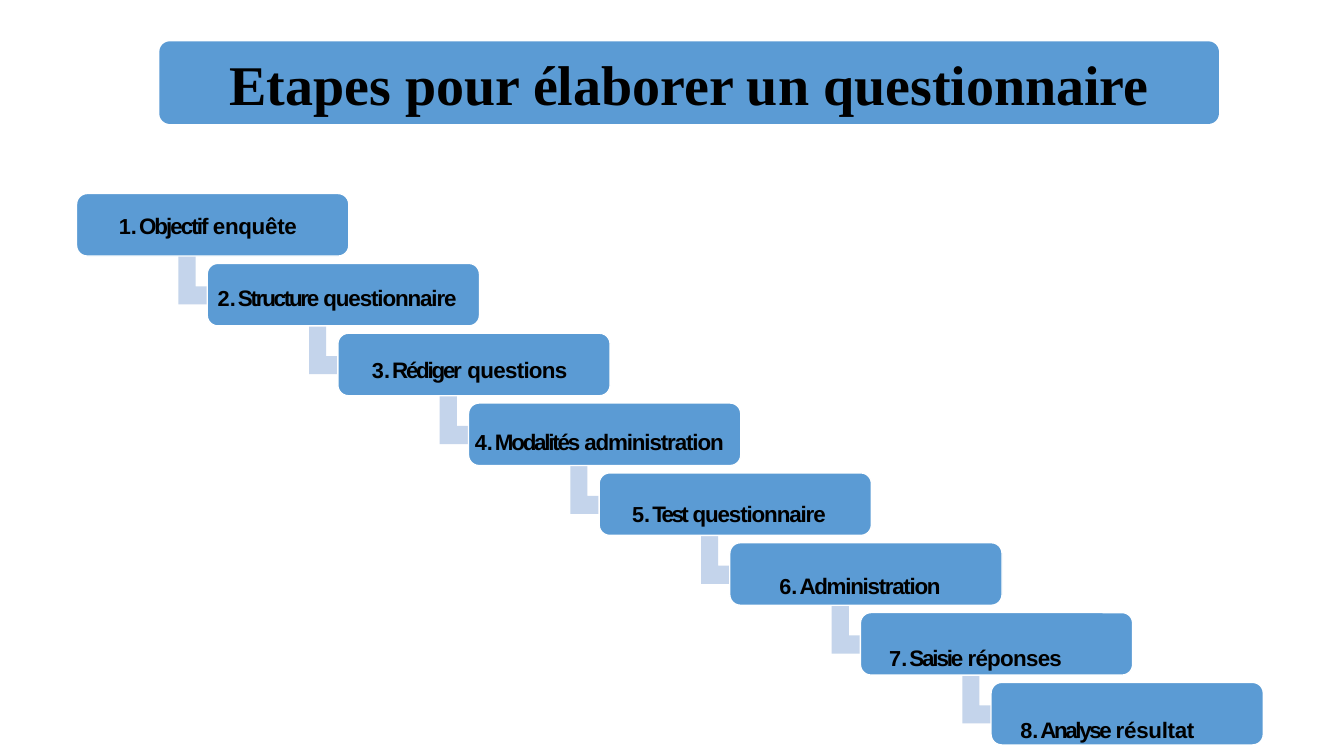
from lxml import etree
from pptx import Presentation
from pptx import util as u
from pptx.dml.color import RGBColor
from pptx.enum import shapes, text
from pptx.oxml.ns import qn

BLUE = RGBColor(0x5B, 0x9B, 0xD4)
PALE = RGBColor(0xC4, 0xD4, 0xEB)
WHITE = RGBColor(0xFF, 0xFF, 0xFF)
BLACK = RGBColor(0, 0, 0)

TITLE = "Etapes pour élaborer un questionnaire"
# Indent in inches, then runs of (text, letter spacing in points)
STEPS = [
    (0.22, [("Objectif ", -1.4), ("enquête", -0.2)]),
    (1.2, [("Structure ", -1.6), ("questionnaire", -0.8)]),
    (2.73, [("Rédiger", -1.6), (" questions", -0.5)]),
    (3.75, [("Modalités ", -1.6), ("administration", -0.8)]),
    (5.31, [("Test ", -1.8), ("questionnaire", -0.8)]),
    (6.77, [("Administration", -0.9)]),
    (7.86, [("Saisie ", -1.5), ("réponses", -0.5)]),
    (9.16, [("Analyse ", -1.7), ("résultat", -0.2)]),
]
LEFT, TOP, WIDE, HIGH = 0.76, 1.92, 2.7, 0.62
LAST = len(STEPS) - 1
STEP_X, STEP_Y = 9.07 / LAST, 4.85 / LAST
# Bent arrow, measured from the top left corner of its step
ARROW = [(1.18, 0.62), (1.01, 0.62), (1.01, 1.1), (1.42, 1.1), (1.42, 1.14),
         (1.6, 1.01), (1.42, 0.88), (1.42, 0.92), (1.18, 0.92)]


def assign(item, values):
    for name, value in values.items():
        setattr(item, name, value)


class Deck:
    font = {"name": "Arial", "size": u.Pt(16), "bold": True}
    head = {"name": "Times New Roman", "size": u.Pt(40), "bold": True}
    frame = {"margin_left": 0, "margin_top": 0, "margin_right": 0,
             "margin_bottom": 0, "word_wrap": True}

    def __init__(self):
        self.deck = Presentation()
        assign(self.deck, {"slide_width": u.Inches(13.33),
                           "slide_height": u.Inches(7.5)})
        self.slide = self.deck.slides.add_slide(self.deck.slide_layouts[6])

    def paint(self, shape, fill, line=None):
        shape.shadow.inherit = False
        shape.fill.solid()
        shape.fill.fore_color.rgb = fill
        if line is None:
            shape.line.fill.background()
        else:
            shape.line.color.rgb = line
            shape.line.width = u.Pt(0.96)

    def box(self, x, y, w, h, curve, line=None):
        shape = self.slide.shapes.add_shape(
            shapes.MSO_SHAPE.ROUNDED_RECTANGLE, *map(u.Inches, (x, y, w, h)))
        shape.adjustments[0] = curve
        self.paint(shape, BLUE, line)
        return shape

    def arrow(self, x, y):
        dots = [(u.Inches(x + dx), u.Inches(y + dy)) for dx, dy in ARROW]
        form = self.slide.shapes.build_freeform(*dots[0])
        form.add_line_segments(dots[1:])
        self.paint(form.convert_to_shape(), PALE)

    def title(self, words):
        frame = self.box(1.58, 0.41, 10.51, 0.82, 0.13).text_frame
        assign(frame, self.frame)
        frame.vertical_anchor = text.MSO_ANCHOR.MIDDLE
        para = frame.paragraphs[0]
        para.alignment = text.PP_ALIGN.CENTER
        self.say(para, words, self.head)

    def say(self, para, words, style, gap=0):
        """Add a styled run; gap is its letter spacing in points."""
        run = para.add_run()
        run.text = words
        assign(run.font, style)
        run.font.color.rgb = BLACK
        if gap:
            run.font._element.set("spc", str(round(gap * 100)))

    def number(self, para, indent):
        """Make the paragraph an item of the numbered list."""
        props = para._p.get_or_add_pPr()
        props.set("marL", str(u.Inches(indent)))
        props.set("indent", str(u.Inches(-0.2)))
        etree.SubElement(props, qn("a:buSzPct")).set("val", "97000")
        etree.SubElement(props, qn("a:buFont")).set("typeface", "Arial")
        etree.SubElement(props, qn("a:buAutoNum")).set("type", "arabicPeriod")
        tabs = etree.SubElement(props, qn("a:tabLst"))
        tab = etree.SubElement(tabs, qn("a:tab"))
        tab.set("pos", str(u.Inches(indent)))
        tab.set("algn", "l")

    def labels(self, steps):
        area = self.slide.shapes.add_textbox(
            *map(u.Inches, (1.16, 2.1, 10.9, 5.21)))
        frame = area.text_frame
        assign(frame, self.frame)
        for i, (indent, runs) in enumerate(steps):
            para = frame.add_paragraph() if i else frame.paragraphs[0]
            self.number(para, indent)
            para.space_before = u.Pt(32.3 if i else 0)
            for words, gap in runs:
                self.say(para, words, self.font, gap)


def main():
    page = Deck()
    for i in range(len(STEPS)):
        x, y = LEFT + i * STEP_X, TOP + i * STEP_Y
        if i < LAST:
            page.arrow(x, y)
        page.box(x, y, WIDE, HIGH, 0.17, WHITE)
    page.labels(STEPS)
    page.title(TITLE)
    page.deck.save("out.pptx")


if __name__ == "__main__":
    main()
